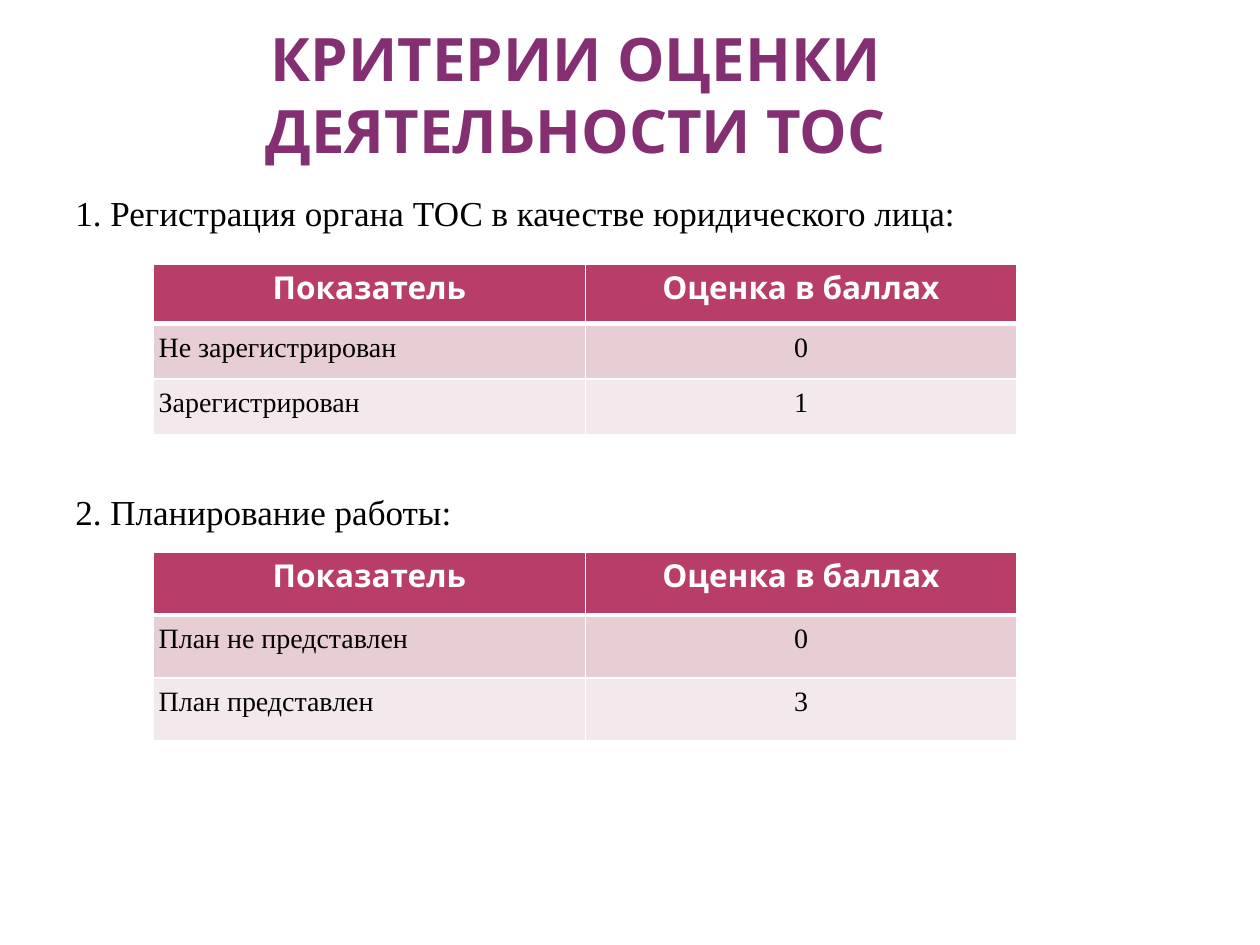
from lxml.etree import SubElement
from pptx import Presentation
from pptx.dml.color import RGBColor
from pptx.enum.text import MSO_ANCHOR, MSO_AUTO_SIZE, PP_ALIGN
from pptx.oxml.ns import qn
from pptx.util import Inches, Pt

COLORS = {
    "title": "852F73", "text": "000000", "white": "FFFFFF",
    "head": "B83D68", "odd": "E6CED4", "even": "F3E8EB",
}
SERIF = "Times New Roman"
SANS = "Karla"


def add_run(para, text, face, size, color, bold=False):
    run = para.add_run()
    run.text = text
    font = run.font
    font.name, font.size, font.bold = face, Pt(size), bold
    font.color.rgb = RGBColor.from_string(COLORS[color])


def add_borders(cell, top, bottom):
    """Draw white cell borders; top and bottom are widths in points."""
    props = cell._tc.get_or_add_tcPr()
    for side, width in (("L", 1), ("R", 1), ("T", top), ("B", bottom)):
        line = SubElement(props, qn(f"a:ln{side}"), w=str(Pt(width)))
        fill = SubElement(line, qn("a:solidFill"))
        SubElement(fill, qn("a:srgbClr"), val=COLORS["white"])


prs = Presentation()
prs.slide_width, prs.slide_height = Inches(10), Inches(7.5)
slide = prs.slides.add_slide(prs.slide_layouts[5])

# Title
title = slide.shapes.title
title.left, title.top = Inches(0.28), Inches(0.13)
title.width, title.height = Inches(8.58), Inches(1.18)
frame = title.text_frame
frame.auto_size = MSO_AUTO_SIZE.NONE
frame.word_wrap = True
frame.vertical_anchor = MSO_ANCHOR.BOTTOM
frame.margin_left = frame.margin_right = Inches(0.05)
frame.margin_top = frame.margin_bottom = 0
para = frame.paragraphs[0]
para.alignment = PP_ALIGN.CENTER
add_run(para, "КРИТЕРИИ ОЦЕНКИ ДЕЯТЕЛЬНОСТИ ТОС", SANS, 34.2, "title", True)

# Criteria headings, spaced to leave room for the first table
body = slide.shapes.add_textbox(Inches(0.5), Inches(1.47), Inches(9), Inches(5.23))
frame = body.text_frame
frame.word_wrap = True
para = frame.paragraphs[0]
add_run(para, "1. Регистрация органа ТОС в качестве юридического лица:", SERIF, 20, "text")
para = frame.add_paragraph()
para.space_before = Pt(147)
add_run(para, "2. Планирование работы:", SERIF, 20, "text")

# Score tables
HEAD = ("Показатель", "Оценка в баллах")
TABLES = (
    (2.1, (0.47, 0.44, 0.44), (("Не зарегистрирован", "0"), ("Зарегистрирован", "1"))),
    (4.38, (0.5, 0.5, 0.5), (("План не представлен", "0"), ("План представлен", "3"))),
)
for top, heights, scores in TABLES:
    rows = (HEAD, *scores)
    table = slide.shapes.add_table(
        len(rows), 2, Inches(1.22), Inches(top), Inches(6.85), Inches(sum(heights))
    ).table
    for col in table.columns:
        col.width = Inches(6.85 / 2)
    for r, (height, texts) in enumerate(zip(heights, rows)):
        table.rows[r].height = Inches(height)
        for c, text in enumerate(texts):
            cell = table.cell(r, c)
            add_borders(cell, 3 if r == 1 else 1, 3 if r == 0 else 1)
            cell.fill.solid()
            shade = ("head", "odd", "even")[r]
            cell.fill.fore_color.rgb = RGBColor.from_string(COLORS[shade])
            para = cell.text_frame.paragraphs[0]
            para.alignment = PP_ALIGN.CENTER
            if r == 0:
                add_run(para, text, SANS, 18, "white", True)
                continue
            if c == 0:
                para.alignment = PP_ALIGN.JUSTIFY
            cell.margin_left = cell.margin_right = Inches(0.04)
            cell.margin_top = cell.margin_bottom = Inches(0.07)
            add_run(para, text, SERIF, 16, "text")

prs.save("out.pptx")
